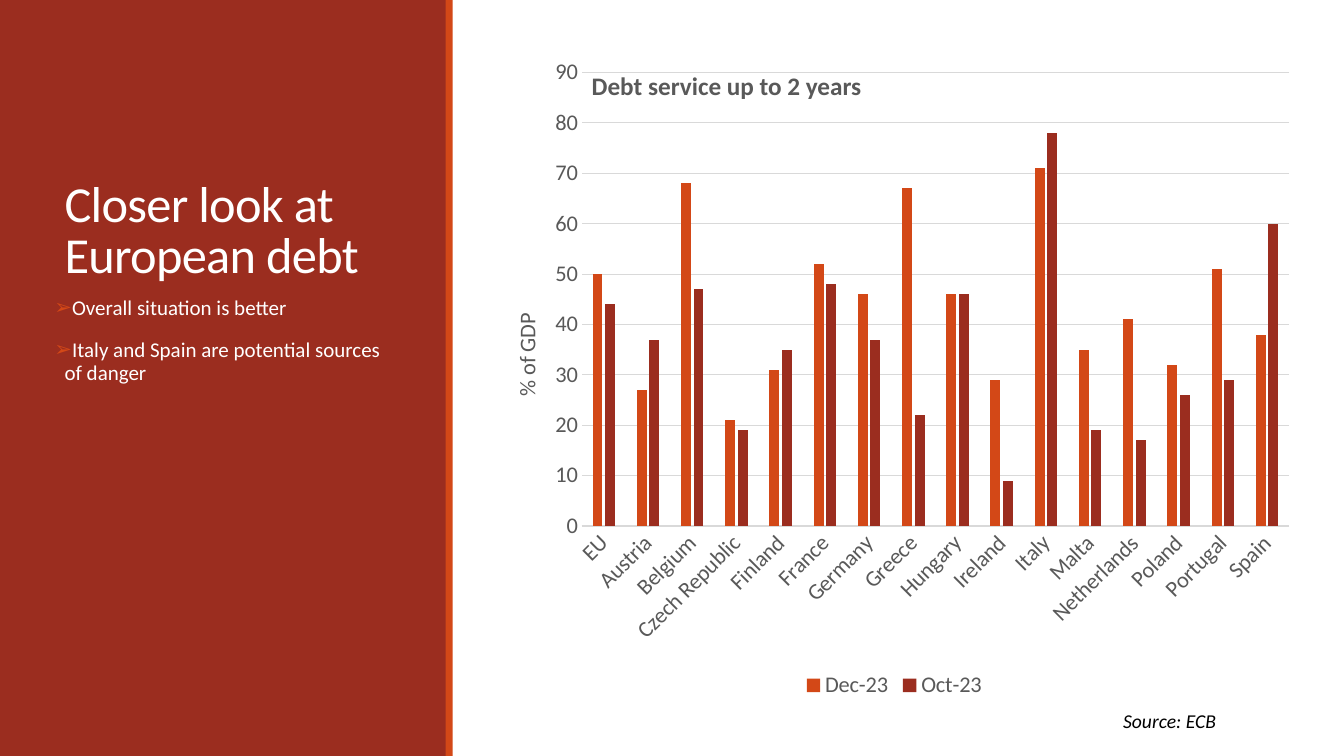
import pptx
import pptx.chart.data
import pptx.dml.color
import pptx.enum.chart
import pptx.enum.shapes
import pptx.enum.text
import pptx.oxml
import pptx.oxml.ns
import pptx.util

Inches = pptx.util.Inches
Pt = pptx.util.Pt
qn = pptx.oxml.ns.qn

COLOURS = {"rust": "9B2D1F", "orange": "D34817", "white": "FFFFFF",
           "black": "000000", "grey": "595959", "rule": "D9D9D9"}
FONT = "Calibri"
TITLE = "Closer look at European debt"
POINTS = ["Overall situation is better",
          "Italy and Spain are potential sources of danger"]
PANELS = [("rust", (0, 0, 4.43, 7.5)), ("orange", (4.42, 0, 0.07, 7.5))]
LABELS = [
    ("Source: ECB", (11.04, 6.98, 1.76, 0.34), {"size": 14, "colour": "black", "italic": True}),
    ("Debt service up to 2 years", (5.77, 0.65, 2.92, 0.4),
     {"size": 18, "colour": "grey", "bold": True}),
]
AXIS_TITLE = "% of GDP"
SERIES = [("Dec-23", "orange"), ("Oct-23", "rust")]
DEBT = [
    ("EU", 50, 44), ("Austria", 27, 37), ("Belgium", 68, 47), ("Czech Republic", 21, 19),
    ("Finland", 31, 35), ("France", 52, 48), ("Germany", 46, 37), ("Greece", 67, 22),
    ("Hungary", 46, 46), ("Ireland", 29, 9), ("Italy", 71, 78), ("Malta", 35, 19),
    ("Netherlands", 41, 17), ("Poland", 32, 26), ("Portugal", 51, 29), ("Spain", 38, 60),
]


def rgb(name):
    return pptx.dml.color.RGBColor.from_string(COLOURS[name])


def place(shape, position):
    for name, value in zip(("left", "top", "width", "height"), position):
        setattr(shape, name, Inches(value))


def set_values(target, values):
    for name, value in values.items():
        setattr(target, name, value)


def style(font, size, colour, **extra):
    set_values(font, {"name": FONT, "size": Pt(size), **extra})
    font.color.rgb = rgb(colour)


def add_child(parent, tag, **attributes):
    child = parent.makeelement(qn(tag), attributes)
    parent.append(child)
    return child


def set_layout(parent, index, **fractions):
    for old in parent.findall(qn("c:layout")):
        parent.remove(old)
    layout = parent.makeelement(qn("c:layout"), {})
    parent.insert(index, layout)
    manual = add_child(layout, "c:manualLayout")
    if "w" in fractions:
        add_child(manual, "c:layoutTarget", val="inner")
    for axis in ("x", "y"):
        add_child(manual, f"c:{axis}Mode", val="edge")
    for name, value in fractions.items():
        add_child(manual, f"c:{name}", val=str(value))


def add_panels(page):
    tree = page.shapes.title.element.getparent()
    for order, (colour, position) in enumerate(PANELS):
        panel = page.shapes.add_shape(pptx.enum.shapes.MSO_SHAPE.RECTANGLE, *map(Inches, position))
        panel.shadow.inherit = False
        panel.fill.solid()
        panel.fill.fore_color.rgb = rgb(colour)
        panel.line.fill.background()
        tree.insert(2 + order, panel.element)


def add_text(page):
    title, body = page.placeholders
    place(title, (0.54, 0.57, 3.37, 2.3))
    place(body, (0.54, 2.9, 3.37, 3.65))
    frame = {"word_wrap": True, "auto_size": pptx.enum.text.MSO_AUTO_SIZE.NONE}
    set_values(title.text_frame,
               {**frame, "vertical_anchor": pptx.enum.text.MSO_ANCHOR.BOTTOM})
    set_values(body.text_frame, {**frame, "margin_left": 0, "margin_right": 0})
    para = title.text_frame.paragraphs[0]
    set_values(para, {"line_spacing": 0.85, "alignment": pptx.enum.text.PP_ALIGN.LEFT})
    span = para.add_run()
    span.text = TITLE
    style(span.font, 36, "white")
    span.font._element.set("spc", "-50")
    body.text_frame.text = "\n".join(POINTS)
    for para in body.text_frame.paragraphs:
        set_values(para, {"line_spacing": 0.9, "space_before": Pt(12), "space_after": Pt(2)})
        style(para.runs[0].font, 15, "white")
        properties = para._p.get_or_add_pPr()
        properties.set("marL", str(Inches(0.1)))
        properties.set("indent", str(Inches(-0.1)))
        bullet_colour = add_child(properties, "a:buClr")
        add_child(bullet_colour, "a:srgbClr", val=COLOURS["orange"])
        add_child(properties, "a:buChar", char="➢")


def add_chart(page):
    data = pptx.chart.data.CategoryChartData()
    countries, *columns = zip(*DEBT)
    data.categories = countries
    for (name, _), values in zip(SERIES, columns):
        data.add_series(name, values)
    chart = page.shapes.add_chart(pptx.enum.chart.XL_CHART_TYPE.COLUMN_CLUSTERED,
                                  *map(Inches, (4.79, 0.46, 8.16, 6.52)), data).chart
    style(chart.font, 16, "grey")
    set_values(chart, {"has_title": False, "has_legend": True})
    set_values(chart.legend, {"position": pptx.enum.chart.XL_LEGEND_POSITION.BOTTOM,
                              "include_in_layout": False})
    style(chart.legend.font, 16, "grey")
    plot = chart.plots[0]
    set_values(plot, {"gap_width": 219, "overlap": -27, "vary_by_categories": False})
    for series, (_, colour) in zip(plot.series, SERIES):
        series.format.fill.solid()
        series.format.fill.fore_color.rgb = rgb(colour)
    category, value = chart.category_axis, chart.value_axis
    for axis in (category, value):
        set_values(axis, {"major_tick_mark": pptx.enum.chart.XL_TICK_MARK.NONE,
                          "minor_tick_mark": pptx.enum.chart.XL_TICK_MARK.NONE})
        style(axis.tick_labels.font, 16, "grey")
    set_values(value, {"minimum_scale": 0, "maximum_scale": 90, "major_unit": 10,
                       "has_major_gridlines": True})
    for line in (category.format.line, value.major_gridlines.format.line):
        line.color.rgb = rgb("rule")
        line.width = Pt(0.75)
    value.format.line.fill.background()
    category._element.find(qn("c:txPr")).find(qn("a:bodyPr")).set("rot", "-2700000")
    heading = value.axis_title
    heading.text_frame.text = AXIS_TITLE
    style(heading.text_frame.paragraphs[0].runs[0].font, 16, "grey", bold=False)
    turned = heading._element.find(".//" + qn("a:bodyPr"))
    turned.set("rot", "-5400000")
    turned.set("vert", "horz")
    set_layout(heading._element, 1, x=0.03, y=0.4)
    set_layout(chart._chartSpace.find(".//" + qn("c:plotArea")), 0, x=0.12, y=0.04, w=0.86, h=0.69)


def add_labels(page):
    for text, position, look in LABELS:
        box = page.shapes.add_textbox(*map(Inches, position))
        box.text_frame.word_wrap = True
        span = box.text_frame.paragraphs[0].add_run()
        span.text = text
        style(span.font, **look)


def main():
    deck = pptx.Presentation()
    set_values(deck, {"slide_width": Inches(13.33), "slide_height": Inches(7.5)})
    page = deck.slides.add_slide(deck.slide_layouts[1])
    add_text(page)
    add_panels(page)
    add_chart(page)
    add_labels(page)
    deck.save("out.pptx")


if __name__ == "__main__":
    main()
